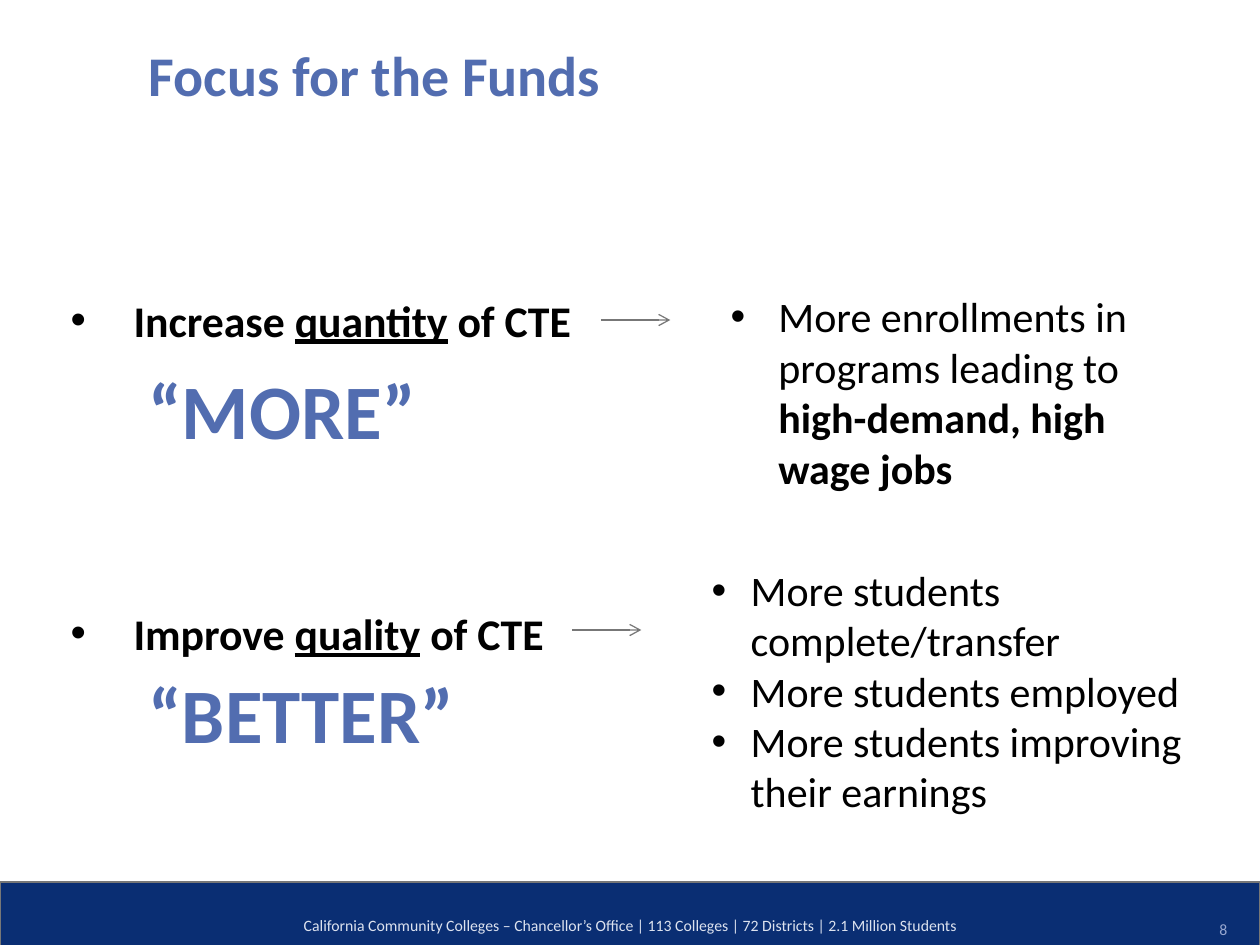
from lxml import etree
from pptx import Presentation
from pptx import util as u
from pptx.dml.color import RGBColor
from pptx.enum import shapes, text
from pptx.oxml.ns import qn

COLORS = {
    "navy": "0A2E73",
    "blue": "526DB0",
    "number": "97A7D0",
    "footer": "DCE2EF",
    "gray": "777777",
    "white": "FFFFFF",
    "black": "000000",
}


def color(name):
    return RGBColor.from_string(COLORS[name])


def place(shape, left, top, width, height):
    shape.left, shape.top = u.Inches(left), u.Inches(top)
    shape.width, shape.height = u.Inches(width), u.Inches(height)


def style(para, size, name, bold=False):
    para.font.name = "Calibri"
    para.font.size = u.Pt(size)
    para.font.bold = bold
    para.font.color.rgb = color(name)


def add_bullet(para, indent):
    props = para._p.get_or_add_pPr()
    props.set("marL", str(u.Inches(indent)))
    props.set("indent", str(-u.Inches(indent)))
    font = etree.SubElement(props, qn("a:buFont"))
    font.set("typeface", "Arial")
    etree.SubElement(props, qn("a:buChar")).set("char", "•")


def add_text(page, words, area, size, name, bold=False):
    box = page.shapes.add_textbox(*map(u.Inches, area))
    box.text_frame.word_wrap = True
    para = box.text_frame.paragraphs[0]
    para.text = words
    style(para, size, name, bold)
    return box


def add_list(page, area, indent, items):
    """Each item is a pair: plain words and the bold words after them."""
    box = page.shapes.add_textbox(*map(u.Inches, area))
    frame = box.text_frame
    frame.word_wrap = True
    for index, (plain, strong) in enumerate(items):
        para = frame.add_paragraph() if index else frame.paragraphs[0]
        add_bullet(para, indent)
        style(para, 24, "black")
        para.add_run().text = plain
        if strong:
            span = para.add_run()
            span.text = strong
            span.font.bold = True


def add_arrow(page, left, top):
    arrow = page.shapes.add_connector(
        shapes.MSO_CONNECTOR.STRAIGHT,
        u.Inches(left), u.Inches(top), u.Inches(left + 0.55), u.Inches(top))
    arrow.line.color.rgb = color("gray")
    arrow.line.width = u.Pt(0.75)
    line = arrow.line._get_or_add_ln()
    etree.SubElement(line, qn("a:tailEnd")).set("type", "arrow")
    etree.SubElement(arrow._element.spPr, qn("a:effectLst"))


def add_footer(page):
    bar = page.shapes.add_shape(
        shapes.MSO_SHAPE.RECTANGLE, *map(u.Inches, (0, 7, 10, 0.58)))
    bar.shadow.inherit = False
    bar.fill.solid()
    bar.fill.fore_color.rgb = color("navy")
    bar.line.color.rgb = color("gray")
    bar.line.width = u.Pt(0.75)
    add_text(page, "8", (9.58, 7.25, 0.42, 0.25), 9, "number")
    credit = add_text(
        page,
        "California Community Colleges – Chancellor’s Office | 113 Colleges"
        " | 72 Districts | 2.1 Million Students",
        (0, 7.14, 10, 0.4), 9, "footer")
    credit.text_frame.vertical_anchor = text.MSO_ANCHOR.MIDDLE
    credit.text_frame.paragraphs[0].alignment = text.PP_ALIGN.CENTER


def fill_title(title):
    place(title, 1.08, 0.27, 10, 1.25)
    frame = title.text_frame
    frame.text = "Focus for the Funds"
    frame.vertical_anchor = text.MSO_ANCHOR.TOP
    frame.auto_size = text.MSO_AUTO_SIZE.NONE
    para = frame.paragraphs[0]
    para.alignment = text.PP_ALIGN.LEFT
    style(para, 32, "blue", True)


def fill_goals(body):
    place(body, 0.46, 2.07, 5.26, 4.18)
    body.fill.solid()
    body.fill.fore_color.rgb = color("white")
    frame = body.text_frame
    frame.auto_size = text.MSO_AUTO_SIZE.NONE
    goals = [("Increase ", "quantity"), ("Improve ", "quality")]
    for index, (verb, aim) in enumerate(goals):
        para = frame.add_paragraph() if index else frame.paragraphs[0]
        add_bullet(para, 0.5)
        para.line_spacing = 1.5
        para.space_before = u.Pt(134 * index)
        style(para, 25, "black", True)
        for words in (verb, aim, " of CTE"):
            span = para.add_run()
            span.text = words
            if words == aim:
                span.font.underline = True


def main():
    deck = Presentation()
    deck.slide_width, deck.slide_height = u.Inches(10), u.Inches(7.5)
    page = deck.slides.add_slide(deck.slide_layouts[1])

    # Title and the two goals
    fill_title(page.shapes.title)
    fill_goals(page.placeholders[1])

    # Outcomes of each goal
    add_list(page, (5.7, 2.26, 3.87, 1.72), 0.38, [
        ("More enrollments in programs leading to ",
         "high-demand, high wage jobs")])
    add_list(page, (5.55, 4.43, 4.54, 2.12), 0.31, [
        ("More students complete/transfer", ""),
        ("More students employed", ""),
        ("More students improving their earnings", "")])

    # Arrows from goals to outcomes
    add_arrow(page, 4.77, 2.54)
    add_arrow(page, 4.54, 5)

    # Key words under the goals
    for words, top in (("“MORE”", 2.83), ("“BETTER”", 5.24)):
        add_text(page, words, (1.08, top, 3.45, 0.84), 44, "blue", True)

    # Footer band
    add_footer(page)
    deck.save("out.pptx")


if __name__ == "__main__":
    main()
